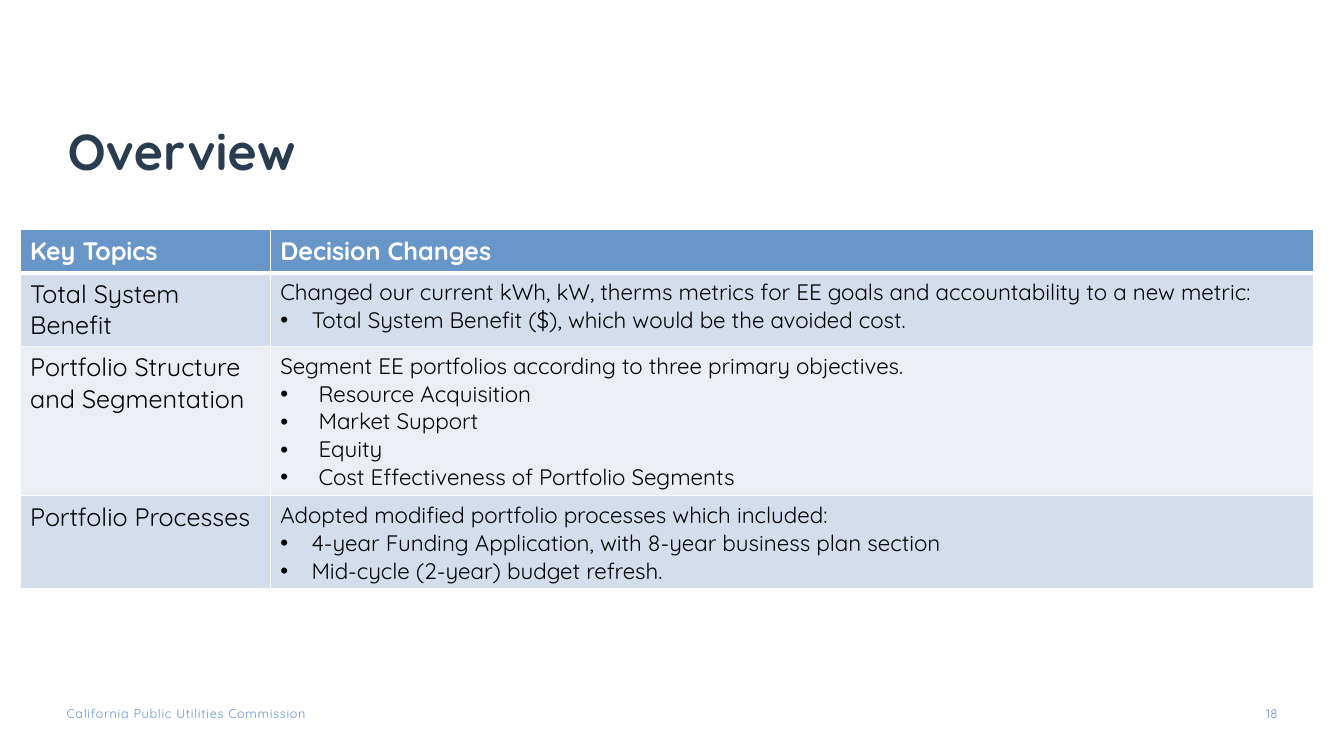
from dataclasses import dataclass

from lxml.etree import SubElement
from pptx import Presentation
from pptx.dml.color import RGBColor
from pptx.enum.text import MSO_ANCHOR, PP_ALIGN
from pptx.oxml.ns import qn
from pptx.util import Inches, Pt


@dataclass(frozen=True)
class Theme:
    """Colours, typeface and type sizes of the slide."""
    font: str = "Quicksand"
    navy: str = "2A3C50"
    blue: str = "6996C9"
    white: str = "FFFFFF"
    black: str = "000000"
    bands: tuple = ("D4DDEB", "EBEFF5")
    title: int = 36
    topic: int = 18
    body: int = 16
    footer: int = 9


class SlideBuilder:
    """Draws styled elements on the current slide."""

    def __init__(self, s, theme):
        """Keep the slide and its theme."""
        self.s, self.theme = s, theme

    def run(self, p, text, size, color, bold=False, spacing=0):
        """Add one styled run to a paragraph."""
        r = p.add_run()
        r.text = text
        r.font.name, r.font.size, r.font.bold = self.theme.font, Pt(size), bold
        r.font.color.rgb = RGBColor.from_string(color)
        if spacing:
            r._r.get_or_add_rPr().set("spc", str(int(spacing * 100)))

    def text(self, box, text, size, color, margins=(0, 0, 0, 0), anchor=MSO_ANCHOR.TOP,
             align=PP_ALIGN.LEFT, line=1.0, **style):
        """Add a one-paragraph text box."""
        tf = self.s.shapes.add_textbox(*map(Inches, box)).text_frame
        tf.word_wrap, tf.vertical_anchor = True, anchor
        tf.margin_left, tf.margin_top, tf.margin_right, tf.margin_bottom = map(Inches, margins)
        p = tf.paragraphs[0]
        p.alignment, p.line_spacing = align, line
        self.run(p, text, size, color, **style)

    def bullet(self, p, indent):
        """Give a paragraph a hanging bullet."""
        pPr = p._p.get_or_add_pPr()
        pPr.set("marL", str(Inches(indent)))
        pPr.set("indent", str(-Inches(indent)))
        SubElement(pPr, qn("a:buFont"), typeface="Arial")
        SubElement(pPr, qn("a:buChar"), char="•")

    def cell(self, cell, lines, size, color, fill, bold=False, indent=0, bottom=1):
        """Fill a cell with a lead line and bulleted lines, and edge it in white."""
        tcPr = cell._tc.get_or_add_tcPr()
        for side in "LRTB":
            width = bottom if side == "B" else 1
            ln = SubElement(tcPr, qn(f"a:ln{side}"), w=str(Pt(width)))
            SubElement(SubElement(ln, qn("a:solidFill")), qn("a:srgbClr"), val=self.theme.white)
        cell.fill.solid()
        cell.fill.fore_color.rgb = RGBColor.from_string(fill)
        tf = cell.text_frame
        for i, line in enumerate(lines):
            p = tf.add_paragraph() if i else tf.paragraphs[0]
            if i:
                self.bullet(p, indent)
            self.run(p, line, size, color, bold)

    def table(self, box, widths, heights, header, rows):
        """Add a table with a header row and banded topic rows."""
        t = self.theme
        table = self.s.shapes.add_table(len(heights), len(widths), *map(Inches, box)).table
        for column, width in zip(table.columns, widths):
            column.width = Inches(width)
        for row, height in zip(table.rows, heights):
            row.height = Inches(height)
        for c, label in enumerate(header):
            self.cell(table.cell(0, c), [label], t.topic, t.white, t.blue, bold=True, bottom=3)
        for i, (topic, indent, lines) in enumerate(rows):
            band = t.bands[i % 2]
            self.cell(table.cell(i + 1, 0), [topic], t.topic, t.black, band)
            self.cell(table.cell(i + 1, 1), lines, t.body, t.black, band, indent=indent)


HEADER = ["Key Topics", "Decision Changes"]
TOPICS = [
    ("Total System Benefit", 0.31, [
        "Changed our current kWh, kW, therms metrics for EE goals and accountability to a new metric:",
        "Total System Benefit ($), which would be the avoided cost."]),
    ("Portfolio Structure and Segmentation", 0.38, [
        "Segment EE portfolios according to three primary objectives.",
        "Resource Acquisition",
        "Market Support",
        "Equity",
        "Cost Effectiveness of Portfolio Segments"]),
    ("Portfolio Processes", 0.31, [
        "Adopted modified portfolio processes which included:",
        "4-year Funding Application, with 8-year business plan section",
        "Mid-cycle (2-year) budget refresh."]),
]


def main():
    """Build and save the overview slide."""
    prs = Presentation()
    prs.slide_width, prs.slide_height = Inches(13.33), Inches(7.5)
    theme = Theme()
    b = SlideBuilder(prs.slides.add_slide(prs.slide_layouts[6]), theme)
    b.text((0.66, 7, 3.21, 0.15), "California Public Utilities Commission",
           theme.footer, theme.blue, spacing=0.5)
    b.text((0.67, 0.4, 12, 1.45), "Overview", theme.title, theme.navy,
           margins=(0, 0.05, 0.1, 0.05), anchor=MSO_ANCHOR.BOTTOM, line=0.9, bold=True)
    b.text((12.25, 7, 0.42, 0.2), "18", theme.footer, theme.blue, align=PP_ALIGN.RIGHT)
    b.table((0.2, 2.28, 12.83, 3.56), (2.48, 10.35), (0.43, 0.73, 1.48, 0.92), HEADER, TOPICS)
    prs.save("out.pptx")


if __name__ == "__main__":
    main()
